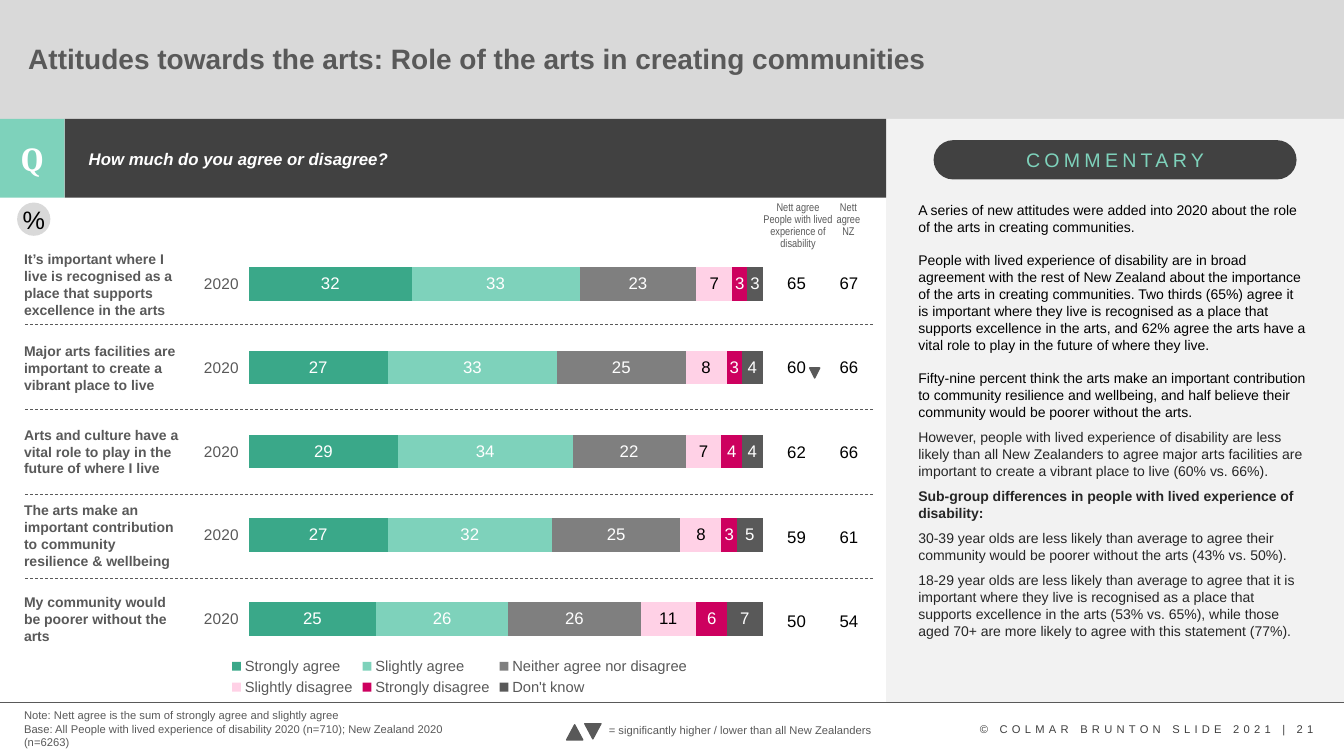
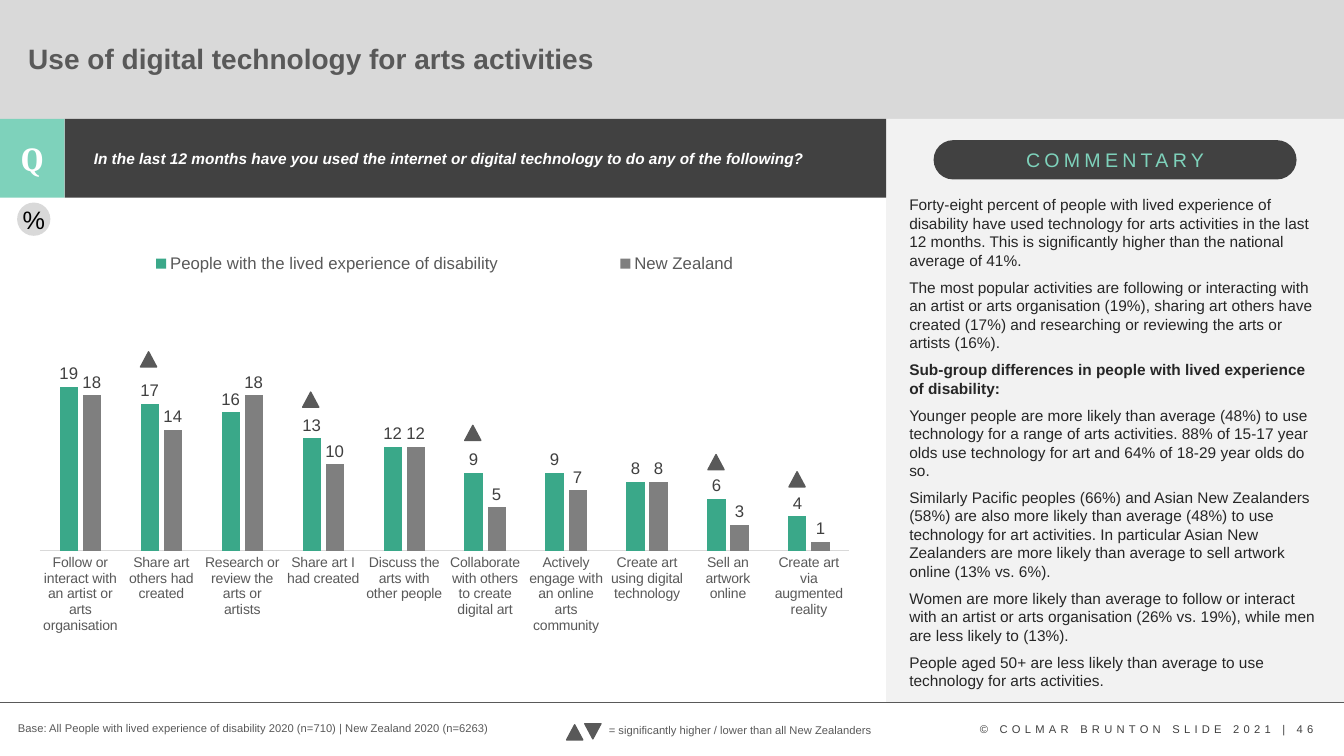
from lxml import etree
from pptx import Presentation
from pptx.chart.data import CategoryChartData
from pptx.dml.color import RGBColor
from pptx.enum.chart import XL_CHART_TYPE as CT, XL_LABEL_POSITION as LP
from pptx.enum.chart import XL_LEGEND_POSITION, XL_TICK_MARK as TICK
from pptx.enum.dml import MSO_LINE
from pptx.enum.shapes import MSO_CONNECTOR, MSO_SHAPE as SHAPE
from pptx.enum.text import MSO_ANCHOR as ANCHOR, MSO_AUTO_SIZE, PP_ALIGN as ALIGN
from pptx.oxml.ns import qn
from pptx.util import Inches, Pt

COLOR = dict(band="D9D9D9", panel="F2F2F2", dark="414141", mint="7ED2BB", green="3AA889",
             grey="7F7F7F", slate="595959", pink="FFD1E6", magenta="CD005F",
             label="404040", ink="262626", black="000000", white="FFFFFF")
WIDTH, HEIGHT = 13.33, 7.5
BAND_END, QUESTION_END, FOOTER_TOP, PANEL_LEFT, Q_WIDTH = 1.18, 1.96, 6.97, 8.79, 0.64

SUBGROUPS = "Sub-group differences in people with lived experience of disability:"

ATTITUDES = dict(
    title="Attitudes towards the arts: Role of the arts in creating communities",
    question="How much do you agree or disagree?", question_size=12, question_left=0.78, page=21,
    note=["Note: Nett agree is the sum of strongly agree and slightly agree",
          "Base: All People with lived experience of disability 2020 (n=710); "
          "New Zealand 2020 (n=6263)"],
    note_box=(0.14, 6.98, 4.67, 0.5), commentary_box=(9.01, 1.95, 4.05, 4.9), commentary_size=10,
    # text, space before, colour
    commentary=[
        ("A series of new attitudes were added into 2020 about the role of the arts in creating "
         "communities.", 0, "black"),
        ("People with lived experience of disability are in broad agreement with the rest of New "
         "Zealand about the importance of the arts in creating communities. Two thirds (65%) agree "
         "it is important where they live is recognised as a place that supports excellence in the "
         "arts, and 62% agree the arts have a vital role to play in the future of where they live.",
         12, "black"),
        ("Fifty-nine percent think the arts make an important contribution to community resilience "
         "and wellbeing, and half believe their community would be poorer without the arts.",
         12, "black"),
        ("However, people with lived experience of disability are less likely than all New "
         "Zealanders to agree major arts facilities are important to create a vibrant place to "
         "live (60% vs. 66%).", 6, "ink"),
        (SUBGROUPS, 6, "ink"),
        ("30-39 year olds are less likely than average to agree their community would be poorer "
         "without the arts (43% vs. 50%).", 6, "ink"),
        ("18-29 year olds are less likely than average to agree that it is important where they "
         "live is recognised as a place that supports excellence in the arts (53% vs. 65%), while "
         "those aged 70+ are more likely to agree with this statement (77%).", 6, "ink")])

DIGITAL = dict(
    title="Use of digital technology for arts activities",
    question="In the last 12 months have you used the internet or digital technology to do any "
             "of the following?", question_size=11, question_left=0.83, page=46,
    note=["Base: All People with lived experience of disability 2020 (n=710) | "
          "New Zealand 2020 (n=6263)"],
    note_box=(0.08, 7.11, 5.69, 0.24), commentary_box=(8.92, 1.89, 4.23, 5), commentary_size=11,
    commentary=[
        ("Forty-eight percent of people with lived experience of disability have used technology "
         "for arts activities in the last 12 months. This is significantly higher than the "
         "national average of 41%.", 0, "ink"),
        ("The most popular activities are following or interacting with an artist or arts "
         "organisation (19%), sharing art others have created (17%) and researching or reviewing "
         "the arts or artists (16%).", 6, "ink"),
        (SUBGROUPS, 6, "ink"),
        ("Younger people are more likely than average (48%) to use technology for a range of arts "
         "activities. 88% of 15-17 year olds use technology for art and 64% of 18-29 year olds do "
         "so.", 6, "ink"),
        ("Similarly Pacific peoples (66%) and Asian New Zealanders (58%) are also more likely than "
         "average (48%) to use technology for art activities. In particular Asian New Zealanders "
         "are more likely than average to sell artwork online (13% vs. 6%).", 6, "ink"),
        ("Women are more likely than average to follow or interact with an artist or arts "
         "organisation (26% vs. 19%), while men are less likely to (13%).", 6, "ink"),
        ("People aged 50+ are less likely than average to use technology for arts activities.",
         6, "ink")])

# name, fill, label colour
ANSWERS = [("Strongly agree", "green", "white"), ("Slightly agree", "mint", "white"),
           ("Neither agree nor disagree", "grey", "white"), ("Slightly disagree", "pink", "black"),
           ("Strongly disagree", "magenta", "white"), ("Don't know", "slate", "white")]
# statement, box width, share of each answer, nett agree (lived experience, NZ)
STATEMENTS = [
    ("It’s important where I live is recognised as a place that supports excellence in the arts",
     1.85, (32, 33, 23, 7, 3, 3), (65, 67)),
    ("Major arts facilities are important to create a vibrant place to live",
     1.85, (27, 33, 25, 8, 3, 4), (60, 66)),
    ("Arts and culture have a vital role to play in the future of where I live",
     1.78, (29, 34, 22, 7, 4, 4), (62, 66)),
    ("The arts make an important contribution to community resilience & wellbeing",
     1.78, (27, 32, 25, 8, 3, 5), (59, 61)),
    ("My community would be poorer without the arts",
     1.65, (25, 26, 26, 11, 6, 7), (50, 54))]
NETT_HEADS = [(["Nett agree People with lived experience of disability"], 7.47, 0.89),
              (["Nett", "agree", "NZ"], 8.07, 0.69)]

GROUPS = [("People with the lived experience of disability", "green", "label"),
          ("New Zealand", "grey", "label")]
ACTIVITIES = [("Follow or interact with an artist or arts organisation", 19, 18),
              ("Share art others had created", 17, 14),
              ("Research or review the arts or artists", 16, 18),
              ("Share art I had created", 13, 10),
              ("Discuss the arts with other people", 12, 12),
              ("Collaborate with others to create digital art", 9, 5),
              ("Actively engage with an online arts community", 9, 7),
              ("Create art using digital technology", 8, 8),
              ("Sell an artwork online", 6, 3),
              ("Create art via augmented reality", 4, 1)]
HIGHER_MARKS = {1: 3.49, 3: 3.89, 5: 4.22, 8: 4.51, 9: 4.68}  # activity number: top of mark


def rgb(name):
    return RGBColor.from_string(COLOR[name])


def place(shape, box):
    shape.left, shape.top, shape.width, shape.height = map(Inches, box)


def style(font, size, color, bold=False, italic=False, name="Arial"):
    font.size, font.bold, font.italic, font.name = Pt(size), bold, italic, name
    font.color.rgb = rgb(color)


def write(p, text, size, color, align=ALIGN.LEFT, spacing=None, track=0, **look):
    p.alignment = align
    if spacing:
        p.line_spacing = spacing
    r = p.add_run()
    r.text = text
    style(r.font, size, color, **look)
    if track:
        r._r.get_or_add_rPr().set("spc", str(track * 100))


def paragraphs(tf):
    """Yield the paragraph already in the frame, then new ones."""
    yield tf.paragraphs[0]
    while True:
        yield tf.add_paragraph()


def add_text(slide, box, lines, size, color, anchor=ANCHOR.TOP, wrap=True, **look):
    tf = slide.shapes.add_textbox(*map(Inches, box)).text_frame
    tf.word_wrap, tf.vertical_anchor = wrap, anchor
    for line, p in zip(lines, paragraphs(tf)):
        write(p, line, size, color, **look)


def add_block(slide, box, fill, kind=SHAPE.RECTANGLE, text=None, size=0, color="white", **look):
    sp = slide.shapes.add_shape(kind, *map(Inches, box))
    sp.shadow.inherit = False
    sp.fill.solid()
    sp.fill.fore_color.rgb = rgb(fill)
    sp.line.fill.background()
    if text:
        tf = sp.text_frame
        tf.margin_left = tf.margin_right = tf.margin_top = tf.margin_bottom = 0
        tf.vertical_anchor = ANCHOR.MIDDLE
        write(tf.paragraphs[0], text, size, color, ALIGN.CENTER, **look)
    return sp


def add_mark(slide, left, top, down=False, width=0.16, height=0.15):
    sp = add_block(slide, (left, top, width, height), "slate", SHAPE.ISOSCELES_TRIANGLE)
    sp.line.color.rgb, sp.line.width = rgb("slate"), Pt(1)
    sp.rotation = 180 if down else 0


def add_rule(slide, left, right, y, dash=None):
    line = slide.shapes.add_connector(MSO_CONNECTOR.STRAIGHT, *map(Inches, (left, y, right, y)))
    line.line.color.rgb, line.line.width = rgb("slate"), Pt(0.5)
    if dash:
        line.line.dash_style = dash
    etree.SubElement(line._element.spPr, qn("a:effectLst"))


def move_frame_to_layout(slide, layout):
    """Draw the bands, panel and key, and hand them to the layout that all slides use."""
    for ph in list(layout.placeholders)[2:]:
        ph._element.getparent().remove(ph._element)
    add_block(slide, (0, 0, WIDTH, BAND_END), "band")
    add_block(slide, (PANEL_LEFT, BAND_END, WIDTH - PANEL_LEFT, FOOTER_TOP - BAND_END), "panel")
    add_rule(slide, 0, WIDTH, FOOTER_TOP)
    strip = QUESTION_END - BAND_END
    add_block(slide, (Q_WIDTH, BAND_END, PANEL_LEFT - Q_WIDTH, strip), "dark")
    add_block(slide, (0, BAND_END, Q_WIDTH, strip), "mint", text="Q", size=24,
              bold=True, name="Cambria")
    pill = add_block(slide, (9.26, 1.39, 3.6, 0.39), "dark", SHAPE.ROUNDED_RECTANGLE,
                     "COMMENTARY", 14, "mint", track=3)
    pill.adjustments[0] = 0.5
    add_block(slide, (0.17, 2.01, 0.33, 0.33), "band", SHAPE.OVAL, "%", 18, "black")
    add_text(slide, (5.94, 7.13, 2.84, 0.24),
             ["= significantly higher / lower than all New Zealanders"], 8, "slate", wrap=False)
    add_mark(slide, 5.62, 7.19)
    add_mark(slide, 5.8, 7.18, down=True)
    for sp in list(slide.shapes)[2:]:
        layout.shapes._spTree.append(sp._element)


def fill_slide(slide, content):
    title, question = slide.placeholders
    place(title, (0.18, 0.21, 11.19, 0.78))
    place(question, (content["question_left"], 1.45, 7.6, 0.46))
    for ph, anchor in ((title, ANCHOR.MIDDLE), (question, ANCHOR.TOP)):
        ph.text_frame.auto_size = MSO_AUTO_SIZE.NONE
        ph.text_frame.vertical_anchor = anchor
    write(title.text_frame.paragraphs[0], content["title"], 20, "slate", spacing=0.9, bold=True)
    p = question.text_frame.paragraphs[0]
    pPr = p._p.get_or_add_pPr()
    pPr.set("marL", "0")
    pPr.set("indent", "0")
    etree.SubElement(pPr, qn("a:buNone"))
    p.space_before = Pt(0)
    write(p, content["question"], content["question_size"], "white", spacing=0.9,
          bold=True, italic=True)

    tf = slide.shapes.add_textbox(*map(Inches, content["commentary_box"])).text_frame
    tf.word_wrap = True
    for (text, before, color), p in zip(content["commentary"], paragraphs(tf)):
        p.space_before = Pt(before)
        write(p, text, content["commentary_size"], color, bold=text == SUBGROUPS)
    add_text(slide, content["note_box"], content["note"], 8, "slate")
    add_text(slide, (9.62, 7.12, 3.61, 0.24), [f"© COLMAR BRUNTON SLIDE 2021 | {content['page']}"],
             8, "label", wrap=False, track=3)


def set_layout(parent, inner=False, **shares):
    """Fix a chart part's place, as shares (x, y, w, h) of the chart."""
    layout = parent.find(qn("c:layout"))
    if layout is None:
        layout = etree.Element(qn("c:layout"))
        parent.insert(0, layout)
    manual = etree.SubElement(layout, qn("c:manualLayout"))
    parts = [("layoutTarget", "inner")] if inner else []
    parts += [("xMode", "edge"), ("yMode", "edge"), *shares.items()]
    for tag, val in parts:
        etree.SubElement(manual, qn(f"c:{tag}")).set("val", str(val))


def add_bars(slide, kind, box, cats, series, values, gap, overlap, plot_area,
             axis_size, legend_size):
    data = CategoryChartData()
    data.categories = cats
    for (name, *_), vals in zip(series, values):
        data.add_series(name, vals)
    chart = slide.shapes.add_chart(kind, *map(Inches, box), data).chart
    style(chart.font, 10, "black")
    no_fill = etree.Element(qn("c:spPr"))
    etree.SubElement(no_fill, qn("a:noFill"))
    chart._chartSpace.find(qn("c:chart")).addnext(no_fill)
    chart.has_title, chart.has_legend = False, True
    chart.legend.position = XL_LEGEND_POSITION.BOTTOM
    chart.legend.include_in_layout = False
    style(chart.legend.font, legend_size, "slate")
    chart.value_axis.visible = chart.value_axis.has_major_gridlines = False
    style(chart.category_axis.tick_labels.font, axis_size, "slate")
    plot = chart.plots[0]
    plot.gap_width, plot.overlap, plot.vary_by_categories = gap, overlap, False
    for ser, (_, fill, label) in zip(plot.series, series):
        ser.invert_if_negative = False
        ser.format.fill.solid()
        ser.format.fill.fore_color.rgb = rgb(fill)
        ser.data_labels.show_value = True
        style(ser.data_labels.font, 12, label)
        if kind == CT.COLUMN_CLUSTERED:
            ser.data_labels.position = LP.OUTSIDE_END
    x, y, w, h = plot_area
    set_layout(chart._chartSpace.chart.plotArea, True, x=x, y=y, w=w, h=h)
    return chart


def draw_attitudes(slide):
    rows = STATEMENTS[::-1]  # a bar chart counts from the bottom up
    chart = add_bars(slide, CT.BAR_STACKED_100, (1.43, 1.62, 6.26, 5.32), ["2020"] * len(rows),
                     ANSWERS, zip(*(shares for _, _, shares, _ in rows)), 150, 100,
                     (0.166, 0.147, 0.814, 0.781), 11, 10.5)
    chart.category_axis.format.line.fill.background()

    row_h, col_w, first_mid = 0.84, 0.52, 2.82
    table = slide.shapes.add_table(len(STATEMENTS), 2, *map(
        Inches, (7.64, 2.39, 2 * col_w, len(STATEMENTS) * row_h))).table
    table.first_row = table.horz_banding = False
    for i, (statement, width, _, nett) in enumerate(STATEMENTS):
        add_text(slide, (0.14, first_mid + i * 0.83 - row_h / 2, width, row_h), [statement],
                 10, "slate", ANCHOR.MIDDLE, bold=True)
        if i:
            add_rule(slide, 0.25, 8.66, 2.38 + i * row_h, MSO_LINE.DASH)
        for j, value in enumerate(nett):
            cell = table.cell(i, j)
            cell.fill.background()
            cell.vertical_anchor = ANCHOR.MIDDLE
            write(cell.text_frame.paragraphs[0], str(value), 12, "black", ALIGN.CENTER)
    for lines, left, width in NETT_HEADS:
        add_text(slide, (left, 1.95, width, 0.59), lines, 8, "slate", align=ALIGN.CENTER,
                 spacing=0.9, name="Arial Narrow")
    add_mark(slide, 8.03, 3.65, down=True, width=0.1, height=0.1)


def draw_digital(slide):
    left, width = 0.39, 8.04
    cats, *values = zip(*ACTIVITIES)
    chart = add_bars(slide, CT.COLUMN_CLUSTERED, (left, 2.47, width, 4.17), cats, GROUPS, values,
                     219, -27, (0, 0.307, 1, 0.411), 10, 12)
    chart.value_axis.minimum_scale, chart.value_axis.maximum_scale = 0, 20
    axis = chart.category_axis
    axis.major_tick_mark = TICK.NONE
    axis.format.line.color.rgb, axis.format.line.width = rgb("band"), Pt(0.75)
    set_layout(chart.legend._element, x=0, y=0, w=1, h=0.07)
    for i, top in HIGHER_MARKS.items():
        add_mark(slide, left + i * width / len(ACTIVITIES) + 0.2, top)


def main():
    prs = Presentation()
    prs.slide_width, prs.slide_height = Inches(WIDTH), Inches(HEIGHT)
    layout = prs.slide_layouts[1]
    pages = [(ATTITUDES, draw_attitudes), (DIGITAL, draw_digital)]
    for i, (content, draw) in enumerate(pages):
        slide = prs.slides.add_slide(layout)
        if i == 0:
            move_frame_to_layout(slide, layout)
        fill_slide(slide, content)
        draw(slide)
    prs.save("out.pptx")


if __name__ == "__main__":
    main()
